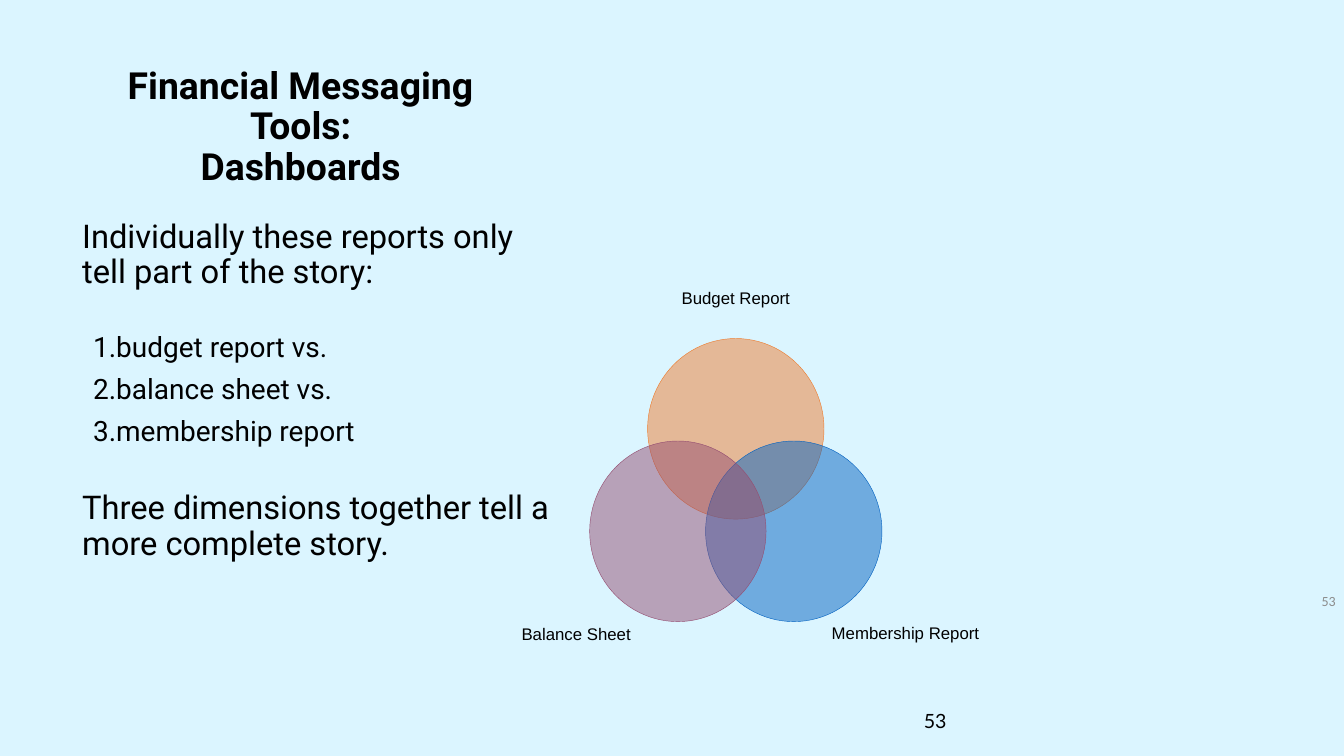
from lxml import etree
from pptx import Presentation
from pptx.dml.color import RGBColor
from pptx.enum.shapes import MSO_SHAPE
from pptx.enum.text import MSO_ANCHOR, MSO_AUTO_SIZE, PP_ALIGN
from pptx.oxml.ns import qn
from pptx.util import Inches, Pt


def color(hex_text):
    return RGBColor.from_string(hex_text)


def set_font(para, name, size, hex_text="000000", bold=False):
    for span in para.runs:
        span.font.name = name
        span.font.size = Pt(size)
        span.font.bold = bold
        span.font.color.rgb = color(hex_text)


deck = Presentation()
deck.slide_width, deck.slide_height = Inches(16), Inches(9)
page = deck.slides.add_slide(deck.slide_layouts[5])
page.background.fill.solid()
page.background.fill.fore_color.rgb = color("DBF5FF")

# Title
title = page.shapes.title
title.left, title.top = Inches(1), Inches(0.75)
title.width, title.height = Inches(5.16), Inches(1.54)
frame = title.text_frame
frame.text = "Financial Messaging Tools:\vDashboards"
frame.word_wrap = True
frame.auto_size = MSO_AUTO_SIZE.NONE
frame.vertical_anchor = MSO_ANCHOR.TOP
para = frame.paragraphs[0]
para.alignment = PP_ALIGN.CENTER
para.line_spacing = 0.9
set_font(para, "Roboto", 32, bold=True)

# Venn diagram: circle colour, circle left and top, label left and top
CIRCLE_WIDTH, CIRCLE_HEIGHT = 2.1, 2.15
LABEL_WIDTH, LABEL_HEIGHT = 0.56, 0.54
reports = [
    ("Budget Report", "ED7D31", 7.71, 4.03, 8.48, 3.28),
    ("Membership Report", "0563C1", 8.4, 5.25, 10.5, 7.26),
    ("Balance Sheet", "954F72", 7.02, 5.25, 6.58, 7.27),
]
venn = page.shapes.add_group_shape()
for name, hue, left, top, label_left, label_top in reports:
    circle = venn.shapes.add_shape(
        MSO_SHAPE.OVAL, Inches(left), Inches(top),
        Inches(CIRCLE_WIDTH), Inches(CIRCLE_HEIGHT))
    circle.shadow.inherit = False
    circle.fill.solid()
    circle.fill.fore_color.rgb = color(hue)
    fill_color = circle.fill._xPr.find(qn("a:solidFill"))[0]
    etree.SubElement(fill_color, qn("a:alpha"), val="50000")
    circle.line.color.rgb = color(hue)
    circle.line.width = Pt(0.37)

    # A rectangle lets the unwrapped label run past both sides
    label = venn.shapes.add_shape(
        MSO_SHAPE.RECTANGLE, Inches(label_left), Inches(label_top),
        Inches(LABEL_WIDTH), Inches(LABEL_HEIGHT))
    label.shadow.inherit = False
    label.fill.background()
    label.line.fill.background()
    frame = label.text_frame
    frame.margin_left = frame.margin_right = 0
    frame.margin_top = frame.margin_bottom = 0
    frame.word_wrap = False
    frame.vertical_anchor = MSO_ANCHOR.MIDDLE
    frame.text = name
    frame.paragraphs[0].alignment = PP_ALIGN.CENTER
    set_font(frame.paragraphs[0], "Arial", 14.4)

# Story text: wording, size, space before, numbered
story = [
    ("Individually these reports only tell part of the story:", 28, 0, False),
    ("budget report vs.", 24, 37, True),
    ("balance sheet vs.", 24, 10, True),
    ("membership report", 24, 10, True),
    ("Three dimensions together tell a more complete story.", 28, 37.5, False),
]
box = page.shapes.add_textbox(Inches(0.82), Inches(2.57), Inches(5.89), Inches(4.58))
frame = box.text_frame
frame.word_wrap = True
frame.text = "\n".join(item[0] for item in story)
for para, (_, size, space, numbered) in zip(frame.paragraphs, story):
    para.line_spacing = 0.9
    para.space_before = Pt(space)
    properties = para._p.get_or_add_pPr()
    properties.set("marL", str(Inches(0.44 if numbered else 0.06)))
    properties.set("indent", str(Inches(-0.25 if numbered else 0)))
    if numbered:
        etree.SubElement(properties, qn("a:buFont"), typeface="+mj-lt")
        etree.SubElement(properties, qn("a:buAutoNum"), type="arabicPeriod")
    set_font(para, "Roboto", size)

# Page numbers
numbers = [
    (13, 6.95, 3, 0.4, "Calibri", 12, "8C8C8C", PP_ALIGN.RIGHT, MSO_ANCHOR.MIDDLE),
    (10.9, 8.39, 2.5, 0.6, "Lato", 16.8, "000000", PP_ALIGN.LEFT, MSO_ANCHOR.TOP),
]
for left, top, width, height, font, size, hue, align, anchor in numbers:
    box = page.shapes.add_textbox(
        Inches(left), Inches(top), Inches(width), Inches(height))
    frame = box.text_frame
    frame.word_wrap = True
    frame.vertical_anchor = anchor
    frame.text = "53"
    frame.paragraphs[0].alignment = align
    set_font(frame.paragraphs[0], font, size, hue)

deck.save("out.pptx")
